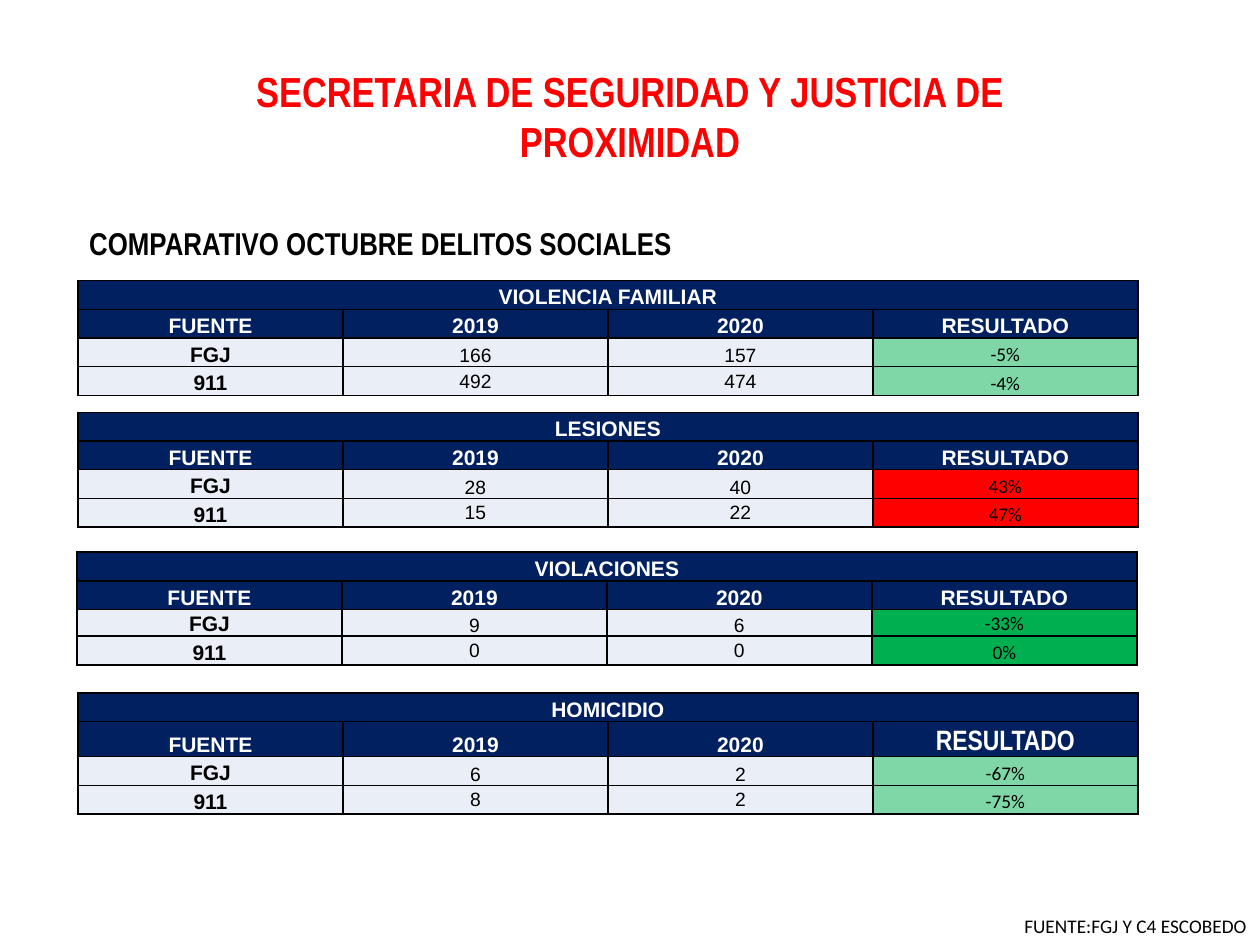
from lxml.etree import SubElement
from pptx import Presentation
from pptx.dml.color import RGBColor
from pptx.enum.text import MSO_ANCHOR, MSO_AUTO_SIZE, PP_ALIGN
from pptx.oxml.ns import qn
from pptx.util import Pt

COLORS = {
    "black": "000000",
    "white": "FFFFFF",
    "navy": "002060",
    "pale": "EAEFF7",
    "red": "FF0000",
    "green": "00B050",
}
COL_W = 151.4
ROW_H = 16.4
HEADER = ["FUENTE", "2019", "2020", "RESULTADO"]


def rgb(name):
    return RGBColor.from_string(COLORS[name])


class SlideBuilder:
    def __init__(self, slide):
        self.slide = slide

    def style(self, p, size, font, color, bold, align):
        p.alignment = align
        p.font.size = Pt(size)
        p.font.name = font
        p.font.bold = bold
        p.font.color.rgb = rgb(color)

    def text(self, box, text, size, font="Arial Narrow", color="black",
             bold=True, align=PP_ALIGN.LEFT, wrap=True):
        tf = self.slide.shapes.add_textbox(*map(Pt, box)).text_frame
        tf.word_wrap = wrap
        tf.auto_size = MSO_AUTO_SIZE.SHAPE_TO_FIT_TEXT
        p = tf.paragraphs[0]
        p.text = text
        self.style(p, size, font, color, bold, align)

    def borders(self, cell):
        tc_pr = cell._tc.get_or_add_tcPr()
        for side in ("a:lnL", "a:lnR", "a:lnT", "a:lnB"):
            ln = SubElement(tc_pr, qn(side), w=str(Pt(1)))
            fill = SubElement(ln, qn("a:solidFill"))
            SubElement(fill, qn("a:srgbClr"), val=COLORS["black"])

    def cell(self, cell, text, fill, size=12, font="Arial", color="black",
             bold=True, anchor=MSO_ANCHOR.BOTTOM, alpha=100):
        cell.margin_left = cell.margin_right = cell.margin_top = Pt(0.7)
        cell.margin_bottom = Pt(0)
        cell.vertical_anchor = anchor
        self.borders(cell)
        cell.fill.solid()
        cell.fill.fore_color.rgb = rgb(fill)
        if alpha < 100:
            clr = cell._tc.tcPr.find(qn("a:solidFill")).find(qn("a:srgbClr"))
            SubElement(clr, qn("a:alpha"), val=str(alpha * 1000))
        p = cell.text_frame.paragraphs[0]
        p.text = text
        self.style(p, size, font, color, bold, PP_ALIGN.CENTER)

    def crime_table(self, left, top, title, rows, result_fill, alpha=100,
                    heights=(ROW_H,) * 4, result_header=None):
        """Title row, header row and one row per source; the result cell is coloured."""
        table = self.slide.shapes.add_table(
            4, 4, Pt(left), Pt(top), Pt(4 * COL_W), Pt(sum(heights))).table
        table.first_row = table.horz_banding = False
        for col in table.columns:
            col.width = Pt(COL_W)
        for row, height in zip(table.rows, heights):
            row.height = Pt(height)

        for c, label in enumerate([title, "", "", ""]):
            self.cell(table.cell(0, c), label, "navy", color="white")
        table.cell(0, 0).merge(table.cell(0, 3))
        for c, label in enumerate(HEADER):
            extra = result_header if c == 3 and result_header else {}
            self.cell(table.cell(1, c), label, "navy", color="white", **extra)

        anchors = (MSO_ANCHOR.BOTTOM, MSO_ANCHOR.MIDDLE)
        for r, ((source, *counts, result), anchor) in enumerate(zip(rows, anchors), 2):
            self.cell(table.cell(r, 0), source, "pale")
            for c, count in enumerate(counts, 1):
                self.cell(table.cell(r, c), count, "pale", 11, bold=False, anchor=anchor)
            self.cell(table.cell(r, 3), result, result_fill, 11, "Calibri",
                      bold=False, alpha=alpha)


def main():
    prs = Presentation()
    prs.slide_width, prs.slide_height = Pt(720), Pt(540)
    s = SlideBuilder(prs.slides.add_slide(prs.slide_layouts[6]))

    s.text((136.8, 33.8, 446.4, 65.5),
           "SECRETARIA DE SEGURIDAD Y JUSTICIA DE PROXIMIDAD",
           24, color="red", align=PP_ALIGN.CENTER)
    s.text((43.9, 124.6, 531.4, 29), "COMPARATIVO OCTUBRE DELITOS SOCIALES", 18)

    s.crime_table(44.6, 160.4, "VIOLENCIA FAMILIAR",
                  [("FGJ", "166", "157", "-5%"), ("911", "492", "474", "-4%")],
                  "green", alpha=50)
    s.crime_table(44.6, 235.6, "LESIONES",
                  [("FGJ", "28", "40", "43%"), ("911", "15", "22", "47%")], "red")
    s.crime_table(44, 315.5, "VIOLACIONES",
                  [("FGJ", "9", "6", "-33%"), ("911", "0", "0", "0%")], "green",
                  heights=(ROW_H, ROW_H, 15.3, ROW_H))
    s.crime_table(44.6, 396, "HOMICIDIO",
                  [("FGJ", "6", "2", "-67%"), ("911", "8", "2", "-75%")],
                  "green", alpha=50, heights=(ROW_H, 20, ROW_H, ROW_H),
                  result_header={"size": 16, "font": "Arial Narrow"})

    s.text((578.2, 519.1, 142.6, 20.6), "FUENTE:FGJ Y C4 ESCOBEDO", 11,
           "Calibri", bold=False, wrap=False)
    prs.save("out.pptx")


if __name__ == "__main__":
    main()
